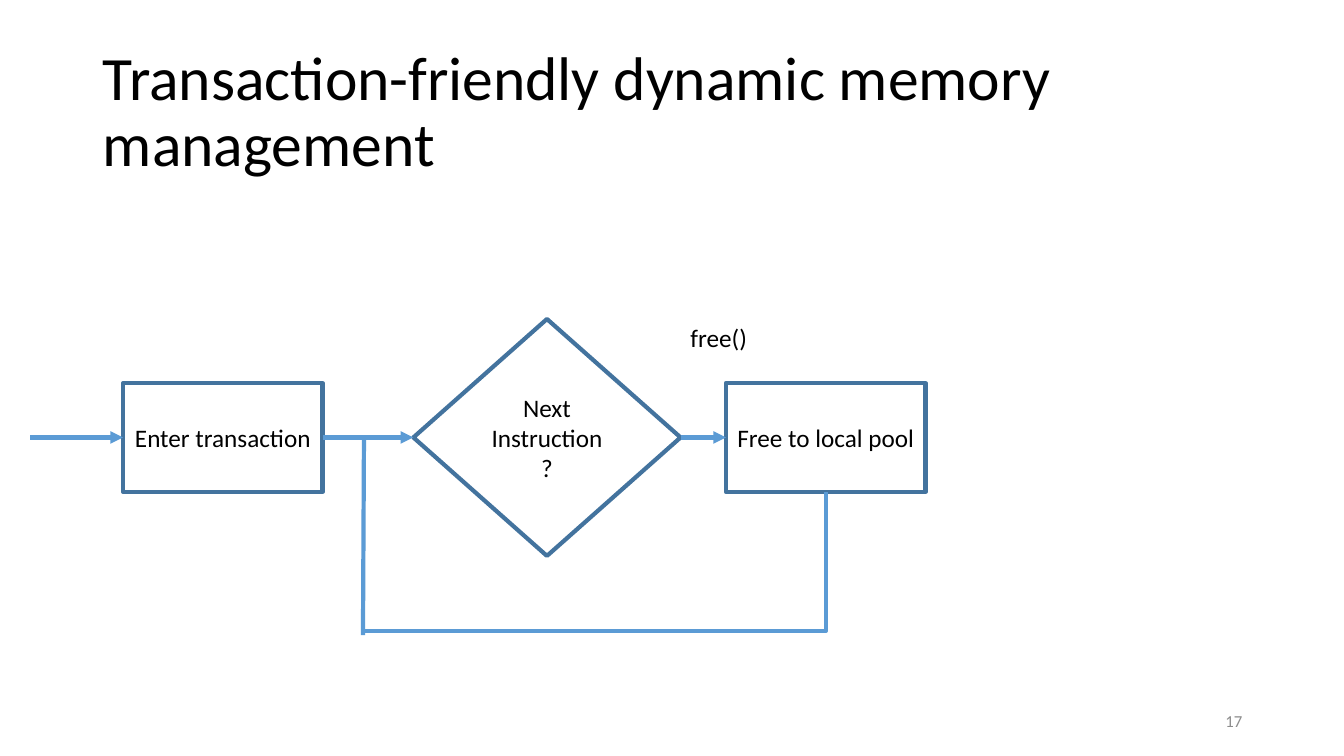
from dataclasses import dataclass

from lxml import etree
from pptx import Presentation
from pptx.dml.color import RGBColor
from pptx.enum.shapes import MSO_CONNECTOR, MSO_SHAPE
from pptx.enum.text import MSO_ANCHOR, MSO_AUTO_SIZE, PP_ALIGN
from pptx.oxml.ns import qn
from pptx.shapes.autoshape import Shape
from pptx.shapes.connector import Connector
from pptx.text.text import TextFrame
from pptx.util import Inches, Pt

RECT, DIAMOND = MSO_SHAPE.RECTANGLE, MSO_SHAPE.DIAMOND
STRAIGHT, ELBOW = MSO_CONNECTOR.STRAIGHT, MSO_CONNECTOR.ELBOW
LEFT, CENTER, RIGHT = PP_ALIGN.LEFT, PP_ALIGN.CENTER, PP_ALIGN.RIGHT
TOP, MIDDLE = MSO_ANCHOR.TOP, MSO_ANCHOR.MIDDLE

BLACK = RGBColor(0x00, 0x00, 0x00)
GRAY = RGBColor(0x8C, 0x8C, 0x8C)
EDGE = RGBColor(0x43, 0x73, 0x9E)
FLOW = RGBColor(0x5B, 0x9B, 0xD5)
FONT = "Calibri"
WEIGHT = Pt(3)
MID_Y = 4.34


@dataclass
class Node:
    text: str
    kind: MSO_SHAPE
    left: float
    width: float
    height: float


@dataclass
class Label:
    text: str
    left: float
    top: float
    width: float
    height: float
    size: int
    color: RGBColor
    align: PP_ALIGN
    anchor: MSO_ANCHOR
    wrap: bool


NODES = [
    Node("Enter transaction", RECT, 1.22, 1.98, 1.08),
    Node("Next\nInstruction ?", DIAMOND, 4.1, 2.65, 2.35),
    Node("Free to local pool", RECT, 7.2, 1.98, 1.08),
]
LABELS = [
    Label("free()", 6.75, 3.15, 0.77, 0.4, 18, BLACK, LEFT, TOP, False),
    Label("17", 9.42, 6.95, 3, 0.4, 12, GRAY, RIGHT, MIDDLE, True),
]

deck = Presentation()
deck.slide_width, deck.slide_height = Inches(13.33), Inches(7.5)
slide = deck.slides.add_slide(deck.slide_layouts[5])
shapes = slide.shapes


def write(frame: TextFrame, text: str, size: int, color: RGBColor,
          align: PP_ALIGN, anchor: MSO_ANCHOR) -> None:
    frame.text = text
    frame.vertical_anchor = anchor
    for para in frame.paragraphs:
        para.alignment = align
        for run in para.runs:
            run.font.name, run.font.size = FONT, Pt(size)
            run.font.color.rgb = color


def add_node(node: Node) -> Shape:
    shape = shapes.add_shape(
        node.kind, Inches(node.left), Inches(MID_Y - node.height / 2),
        Inches(node.width), Inches(node.height))
    shape.shadow.inherit = False
    shape.fill.background()
    shape.line.color.rgb, shape.line.width = EDGE, WEIGHT
    write(shape.text_frame, node.text, 18, BLACK, CENTER, MIDDLE)
    return shape


def add_label(label: Label) -> None:
    box = shapes.add_textbox(Inches(label.left), Inches(label.top),
                             Inches(label.width), Inches(label.height))
    box.text_frame.word_wrap = label.wrap
    write(box.text_frame, label.text, label.size, label.color,
          label.align, label.anchor)


def add_link(kind: MSO_CONNECTOR, x1: float, y1: float, x2: float, y2: float,
             arrow: bool = False) -> Connector:
    link = shapes.add_connector(kind, Inches(x1), Inches(y1),
                                Inches(x2), Inches(y2))
    link.line.color.rgb, link.line.width = FLOW, WEIGHT
    if arrow:
        etree.SubElement(link.line._get_or_add_ln(), qn("a:tailEnd"),
                         type="triangle")
    etree.SubElement(link._element.spPr, qn("a:effectLst"))
    return link


# Title
title = shapes.title
title.left, title.top = Inches(0.92), Inches(0.4)
title.width, title.height = Inches(11.5), Inches(1.45)
write(title.text_frame, "Transaction-friendly dynamic memory management",
      44, BLACK, LEFT, MIDDLE)
title.text_frame.auto_size = MSO_AUTO_SIZE.NONE
title.text_frame.paragraphs[0].line_spacing = 0.9

# Steps and labels
steps = [add_node(node) for node in NODES]
for label in LABELS:
    add_label(label)

# Arrows into each step
start = add_link(STRAIGHT, 0.3, MID_Y, NODES[0].left, MID_Y, arrow=True)
start.end_connect(steps[0], 1)
for i in range(len(NODES) - 1):
    src, dst = NODES[i], NODES[i + 1]
    link = add_link(STRAIGHT, src.left + src.width, MID_Y,
                    dst.left, MID_Y, arrow=True)
    link.begin_connect(steps[i], 3)
    link.end_connect(steps[i + 1], 1)

# Loop back: one bend, turned to run down and then left
pool = NODES[2]
loop_x, loop_y = 3.61, 6.26
pool_x, pool_y = pool.left + pool.width / 2, MID_Y + pool.height / 2
drop, span = loop_y - pool_y, pool_x - loop_x
mid_x, mid_y = (loop_x + pool_x) / 2, (loop_y + pool_y) / 2
bend = add_link(ELBOW, mid_x - drop / 2, mid_y - span / 2,
                mid_x + drop / 2, mid_y + span / 2)
bend._element.spPr.find(qn("a:prstGeom")).set("prst", "bentConnector2")
bend._element.spPr.find(qn("a:xfrm")).set("rot", str(90 * 60000))
add_link(STRAIGHT, 3.6, 6.3, loop_x, MID_Y)

deck.save("out.pptx")
